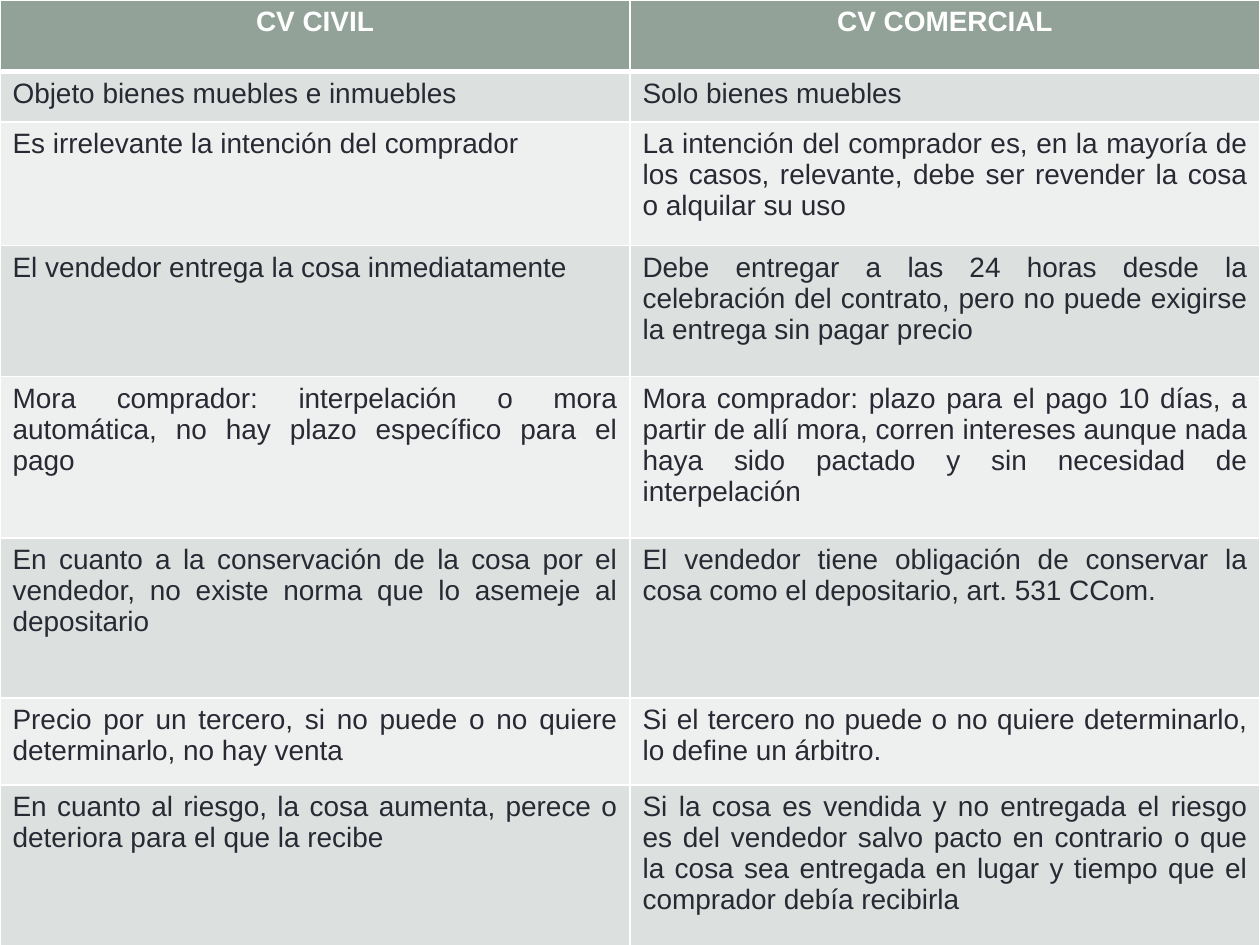
from pptx import Presentation
from pptx.dml.color import RGBColor as RGB
from pptx.enum.text import PP_ALIGN as AL
from pptx.oxml import parse_xml
from pptx.oxml.ns import nsdecls
from pptx.util import Inches, Pt

COLORS = {"head": "93A299", "odd": "DCE0DE", "even": "EEF0EF",
          "text": "292934", "white": "FFFFFF"}

# Row height in inches, civil sale, commercial sale
ROWS = [
    (0.57, "CV CIVIL", "CV COMERCIAL"),
    (0.4, "Objeto bienes muebles e inmuebles", "Solo bienes muebles"),
    (0.98, "Es irrelevante la intención del comprador",
     "La intención del comprador es, en la mayoría de los casos, relevante, "
     "debe ser revender la cosa o alquilar su uso"),
    (1.04, "El vendedor entrega la cosa inmediatamente",
     "Debe entregar a las 24 horas desde la celebración del contrato, "
     "pero no puede exigirse la entrega sin pagar precio"),
    (1.28, "Mora comprador: interpelación o mora automática, "
     "no hay plazo específico para el pago",
     "Mora comprador: plazo para el pago 10 días, a partir de allí mora, corren "
     "intereses aunque nada haya sido pactado y sin necesidad de interpelación"),
    (1.27, "En cuanto a la conservación de la cosa por el vendedor, "
     "no existe norma que lo asemeje al depositario",
     "El vendedor tiene obligación de conservar la cosa como el depositario, "
     "art. 531 CCom."),
    (0.69, "Precio por un tercero, si no puede o no quiere determinarlo, no hay venta",
     "Si el tercero no puede o no quiere determinarlo, lo define un árbitro."),
    (1.28, "En cuanto al riesgo, la cosa aumenta, perece o deteriora "
     "para el que la recibe",
     "Si la cosa es vendida y no entregada el riesgo es del vendedor salvo pacto "
     "en contrario o que la cosa sea entregada en lugar y tiempo que el "
     "comprador debía recibirla"),
]


def add_borders(cell, widths):
    """Put white cell borders ahead of the fill, as the schema requires."""
    tcPr = cell._tc.get_or_add_tcPr()
    for i, (side, width) in enumerate(widths.items()):
        tcPr.insert(i, parse_xml(
            f'<a:{side} {nsdecls("a")} w="{Pt(width)}"><a:solidFill>'
            f'<a:srgbClr val="{COLORS["white"]}"/></a:solidFill></a:{side}>'))


prs = Presentation()
prs.slide_width, prs.slide_height = Inches(10), Inches(7.5)
s = prs.slides.add_slide(prs.slide_layouts[6])

# Comparison table
table = s.shapes.add_table(len(ROWS), 2, 0, 0, Inches(10), Inches(7.5)).table
for col in table.columns:
    col.width = Inches(5)

for i, (height, *texts) in enumerate(ROWS):
    table.rows[i].height = Inches(height)
    header = i == 0
    fill = "head" if header else "odd" if i % 2 else "even"
    for j, text in enumerate(texts):
        cell = table.cell(i, j)
        cell.fill.solid()
        cell.fill.fore_color.rgb = RGB.from_string(COLORS[fill])
        add_borders(cell, {"lnL": 1, "lnR": 1, "lnT": 3 if i == 1 else 1,
                           "lnB": 3 if header else 1})
        p = cell.text_frame.paragraphs[0]
        p.alignment = AL.CENTER if header else AL.JUSTIFY
        r = p.add_run()
        r.text = text
        for name, value in {"name": "Arial", "size": Pt(16), "bold": header}.items():
            setattr(r.font, name, value)
        r.font.color.rgb = RGB.from_string(COLORS["white" if header else "text"])

prs.save("out.pptx")
